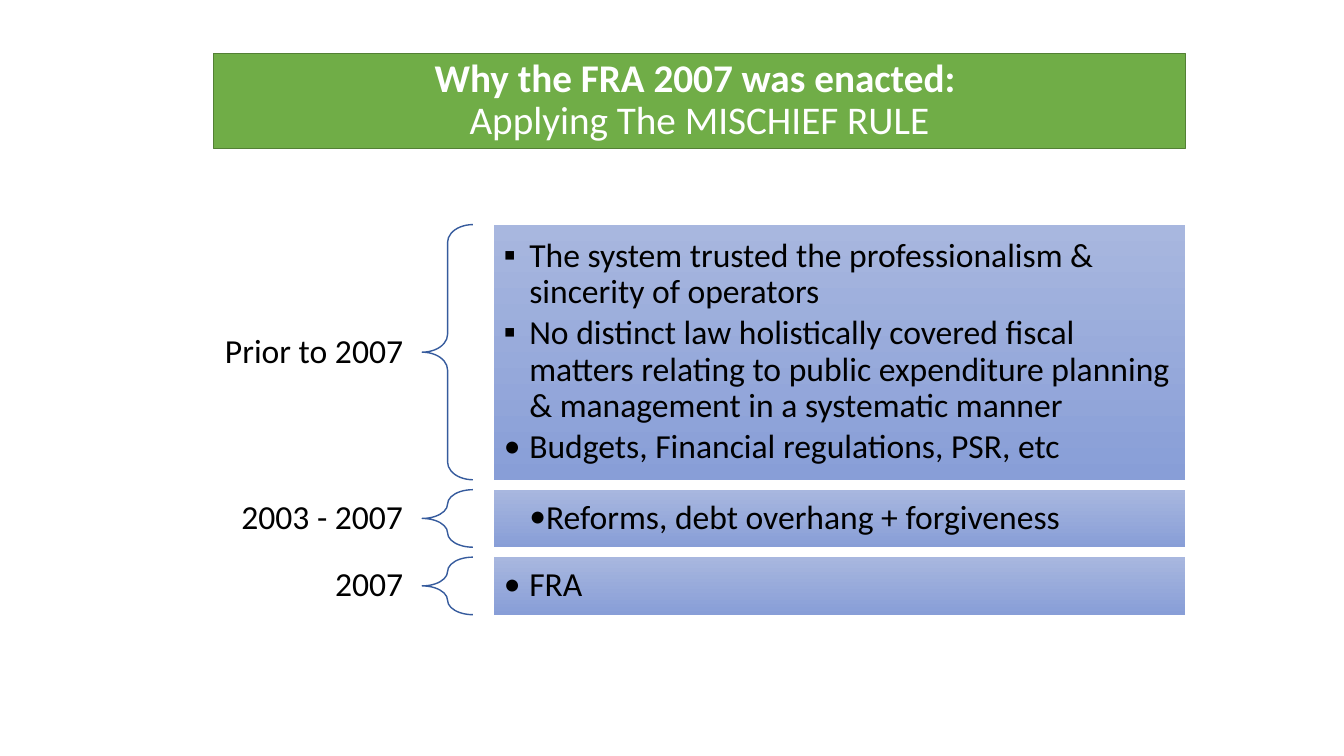
from lxml.etree import SubElement
from pptx import Presentation
from pptx.dml.color import RGBColor
from pptx.enum.shapes import MSO_SHAPE as Preset
from pptx.enum.text import MSO_ANCHOR as Anchor, PP_ALIGN as Align
from pptx.oxml.ns import qn
from pptx.util import Cm, Pt

COLOURS = {
    "title_fill": "70AD47",
    "title_line": "538035",
    "title_text": "FFFFFF",
    "text": "000000",
    "brace": "365B9D",
    "panel_top": "A8B7DF",
    "panel_bottom": "889ED7",
}
LABEL_LEFT, LABEL_WIDTH, LABEL_HEIGHT = 4.24, 6.4, 1.32
BRACE_LEFT, BRACE_WIDTH = 10.64, 1.28
PANEL_LEFT, PANEL_WIDTH = 12.45, 17.42
FIRST_TOP, ROW_GAP = 5.66, 0.25
BULLET_INDENT = 0.64
PERIODS = [
    ("Prior to 2007", 6.43, BULLET_INDENT, [
        ("▪", "The system trusted the professionalism & sincerity of operators"),
        ("▪", "No distinct law holistically covered fiscal matters relating to "
              "public expenditure planning & management in a systematic manner"),
        ("•", "Budgets, Financial regulations, PSR, etc"),
    ]),
    ("2003 - 2007", 1.45, 0, [("•", "Reforms, debt overhang + forgiveness")]),
    ("2007", 1.45, BULLET_INDENT, [("•", "FRA")]),
]


def colour(name):
    """Return the named colour."""
    return RGBColor.from_string(COLOURS[name])


def write_text(para, words, size=24, shade="text", bold=False,
               align=Align.LEFT, space_after=0):
    """Append a formatted run to a paragraph."""
    para.alignment = align
    para.line_spacing = 0.9
    para.space_before = Pt(0)
    para.space_after = Pt(space_after)
    span = para.add_run()
    span.text = words
    span.font.name = "Calibri"
    span.font.size = Pt(size)
    span.font.bold = bold
    span.font.color.rgb = colour(shade)


def set_bullet(para, mark, hanging):
    """Give a paragraph a bullet and its indents."""
    properties = para._p.get_or_add_pPr()
    properties.set("marL", str(Cm(BULLET_INDENT)))
    properties.set("indent", str(-Cm(hanging)))
    SubElement(properties, qn("a:buFont"), typeface="Calibri")
    SubElement(properties, qn("a:buChar"), char=mark)


def set_frame(frame, across, down):
    """Wrap and centre a text frame vertically with the given insets."""
    frame.word_wrap = True
    frame.vertical_anchor = Anchor.MIDDLE
    frame.margin_left = frame.margin_right = Cm(across)
    frame.margin_top = frame.margin_bottom = Cm(down)


def add_title(page):
    """Format the title placeholder as a green banner."""
    title = page.shapes.title
    title.left, title.top = Cm(5.38), Cm(1.35)
    title.width, title.height = Cm(24.49), Cm(2.39)
    title.fill.solid()
    title.fill.fore_color.rgb = colour("title_fill")
    title.line.color.rgb = colour("title_line")
    title.line.width = Pt(1)
    set_frame(title.text_frame, 0.25, 0.13)
    para = title.text_frame.paragraphs[0]
    style = {"size": 28, "shade": "title_text", "align": Align.CENTER}
    write_text(para, "Why the FRA 2007 was enacted: ", bold=True, **style)
    para.add_line_break()
    write_text(para, "Applying The MISCHIEF RULE", **style)


def add_label(page, words, middle):
    """Add a period label centred on a height."""
    box = page.shapes.add_textbox(Cm(LABEL_LEFT), Cm(middle - LABEL_HEIGHT / 2),
                                  Cm(LABEL_WIDTH), Cm(LABEL_HEIGHT))
    set_frame(box.text_frame, 0.48, 0.18)
    write_text(box.text_frame.paragraphs[0], words, align=Align.RIGHT)


def add_brace(page, top, height):
    """Add the brace between a label and its panel."""
    brace = page.shapes.add_shape(Preset.LEFT_BRACE, Cm(BRACE_LEFT), Cm(top),
                                  Cm(BRACE_WIDTH), Cm(height))
    brace.shadow.inherit = False
    brace.adjustments[0] = 0.35
    brace.fill.background()
    brace.line.color.rgb = colour("brace")
    brace.line.width = Pt(1)


def add_panel(page, top, height, hanging, points):
    """Add a gradient panel with a bulleted list."""
    panel = page.shapes.add_shape(Preset.RECTANGLE, Cm(PANEL_LEFT), Cm(top),
                                  Cm(PANEL_WIDTH), Cm(height))
    panel.shadow.inherit = False
    panel.line.fill.background()
    panel.fill.gradient()
    panel.fill.gradient_angle = 270
    for stop, name in zip(panel.fill.gradient_stops, ("panel_top", "panel_bottom")):
        stop.color.rgb = colour(name)
    frame = panel.text_frame
    set_frame(frame, 0.25, 0.25)
    for index, (mark, words) in enumerate(points):
        para = frame.add_paragraph() if index else frame.paragraphs[0]
        write_text(para, words, space_after=3.5)
        set_bullet(para, mark, hanging)


def main():
    """Build the slide and save it."""
    deck = Presentation()
    deck.slide_width, deck.slide_height = Cm(33.87), Cm(19.05)
    page = deck.slides.add_slide(deck.slide_layouts.get_by_name("Title Only"))
    add_title(page)
    top = FIRST_TOP
    for label, height, hanging, points in PERIODS:
        add_label(page, label, top + height / 2)
        add_brace(page, top, height)
        add_panel(page, top, height, hanging, points)
        top += height + ROW_GAP
    deck.save("out.pptx")


if __name__ == "__main__":
    main()
